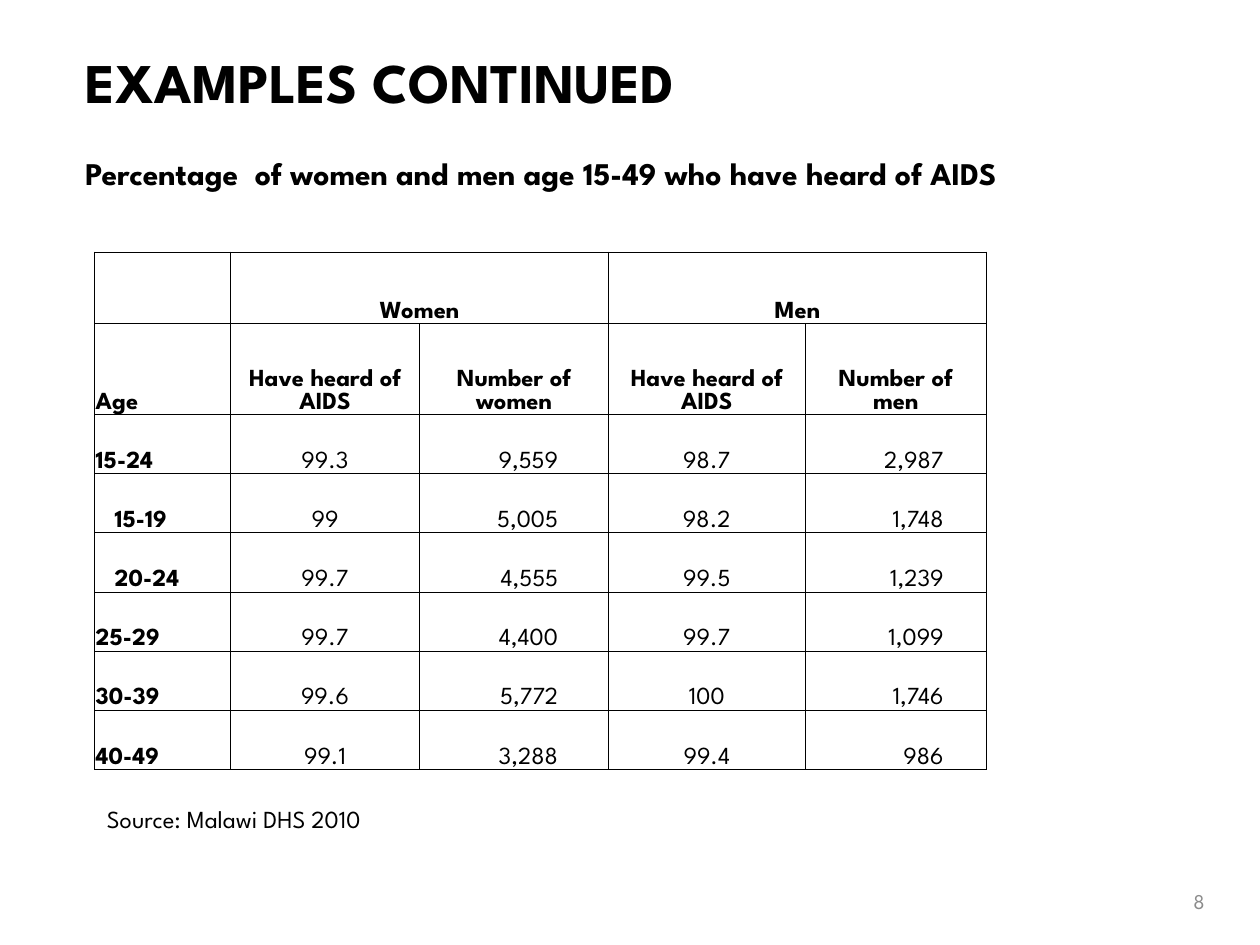
from dataclasses import dataclass

from lxml import etree
from pptx import Presentation
from pptx.dml.color import RGBColor
from pptx.enum import text as txt
from pptx.oxml import ns
from pptx.util import Inches, Pt


@dataclass(frozen=True)
class Theme:
    font: str = "League Spartan"
    ink: str = "000000"
    muted: str = "8C8C8C"
    title: int = 32
    subtitle: int = 18
    body: int = 14
    page: int = 12
    rule: float = 0.5


THEME = Theme()
LEFT, CENTER, RIGHT = txt.PP_ALIGN.LEFT, txt.PP_ALIGN.CENTER, txt.PP_ALIGN.RIGHT

# Content
TITLE = "EXAMPLES CONTINUED"
SUBTITLE = "Percentage  of women and men age 15-49 who have heard of AIDS"
SOURCE = "Source: Malawi DHS 2010"
PAGE = "8"
GROUPS = ["", "Women", "", "Men", ""]
HEADINGS = ["Age", "Have heard of AIDS", "Number of women",
            "Have heard of AIDS", "Number of\nmen"]
AGES = [
    ["15-24", "99.3", "9,559", "98.7", "2,987"],
    ["15-19", "99", "5,005", "98.2", "1,748"],
    ["20-24", "99.7", "4,555", "99.5", "1,239"],
    ["25-29", "99.7", "4,400", "99.7", "1,099"],
    ["30-39", "99.6", "5,772", "100", "1,746"],
    ["40-49", "99.1", "3,288", "99.4", "986"],
]
SUBGROUPS = {"15-19", "20-24"}

# Table geometry in inches
COLUMN_WIDTHS = [1.08, 1.5, 1.5, 1.56, 1.44]
ROW_HEIGHTS = [0.57, 0.72] + [0.47] * len(AGES)
COUNT_INSETS = {2: 0.4, 4: 0.34}
CELL_INSET, SUBGROUP_INSET = 0.01, 0.16


def style(frame, size, bold=False, color=THEME.ink, align=LEFT):
    for paragraph in frame.paragraphs:
        paragraph.alignment = align
        for run in paragraph.runs:
            run.font.name = THEME.font
            run.font.size = Pt(size)
            run.font.bold = bold
            run.font.color.rgb = RGBColor.from_string(color)


def add_label(slide, words, box, size, **look):
    frame = slide.shapes.add_textbox(*map(Inches, box)).text_frame
    frame.word_wrap = True
    frame.text = words
    style(frame, size, **look)
    return frame


def add_borders(cell):
    properties = cell._tc.get_or_add_tcPr()
    for side in ("lnL", "lnR", "lnT", "lnB"):
        line = etree.SubElement(properties, ns.qn(f"a:{side}"), w=str(Pt(THEME.rule)))
        fill = etree.SubElement(line, ns.qn("a:solidFill"))
        etree.SubElement(fill, ns.qn("a:srgbClr"), val=THEME.ink)


def fill_cell(cell, words, row, column):
    is_count = row > 1 and column in COUNT_INSETS
    is_age = column == 0
    add_borders(cell)
    cell.fill.background()
    cell.vertical_anchor = txt.MSO_ANCHOR.BOTTOM
    cell.margin_left = Inches(SUBGROUP_INSET if words in SUBGROUPS else CELL_INSET)
    cell.margin_right = Inches(COUNT_INSETS[column] if is_count else CELL_INSET)
    cell.margin_top, cell.margin_bottom = Inches(CELL_INSET), 0
    cell.text_frame.text = words
    align = LEFT if is_age else RIGHT if is_count else CENTER
    style(cell.text_frame, THEME.body, bold=row < 2 or is_age, align=align)


def add_age_table(slide):
    rows = [GROUPS, HEADINGS, *AGES]
    box = (0.75, 2, sum(COLUMN_WIDTHS), sum(ROW_HEIGHTS))
    table = slide.shapes.add_table(len(rows), len(HEADINGS), *map(Inches, box)).table
    table.first_row = table.horz_banding = False
    for column, width in zip(table.columns, COLUMN_WIDTHS):
        column.width = Inches(width)
    for row, height in zip(table.rows, ROW_HEIGHTS):
        row.height = Inches(height)
    for r, values in enumerate(rows):
        for c, words in enumerate(values):
            fill_cell(table.cell(r, c), words, r, c)
    # Each group heading spans its two columns
    for first in (1, 3):
        table.cell(0, first).merge(table.cell(0, first + 1))


def main():
    deck = Presentation()
    deck.slide_width, deck.slide_height = Inches(10), Inches(7.5)
    slide = deck.slides.add_slide(deck.slide_layouts[5])

    # Title and subtitle
    title = slide.shapes.title
    title.left, title.top, title.width, title.height = map(Inches, (0.58, 0.33, 8.33, 0.67))
    title.text_frame.text = TITLE
    title.text_frame.auto_size = txt.MSO_AUTO_SIZE.NONE
    title.text_frame.vertical_anchor = txt.MSO_ANCHOR.TOP
    style(title.text_frame, THEME.title, bold=True)
    add_label(slide, SUBTITLE, (0.58, 1.17, 8.83, 0.4), THEME.subtitle, bold=True)

    # Table with its source
    add_age_table(slide)
    add_label(slide, SOURCE, (0.75, 6.33, 2.75, 0.34), THEME.body)

    # Page number
    page = add_label(slide, PAGE, (7.33, 6.95, 2.33, 0.4), THEME.page,
                     color=THEME.muted, align=RIGHT)
    page.vertical_anchor = txt.MSO_ANCHOR.MIDDLE

    deck.save("out.pptx")


if __name__ == "__main__":
    main()
